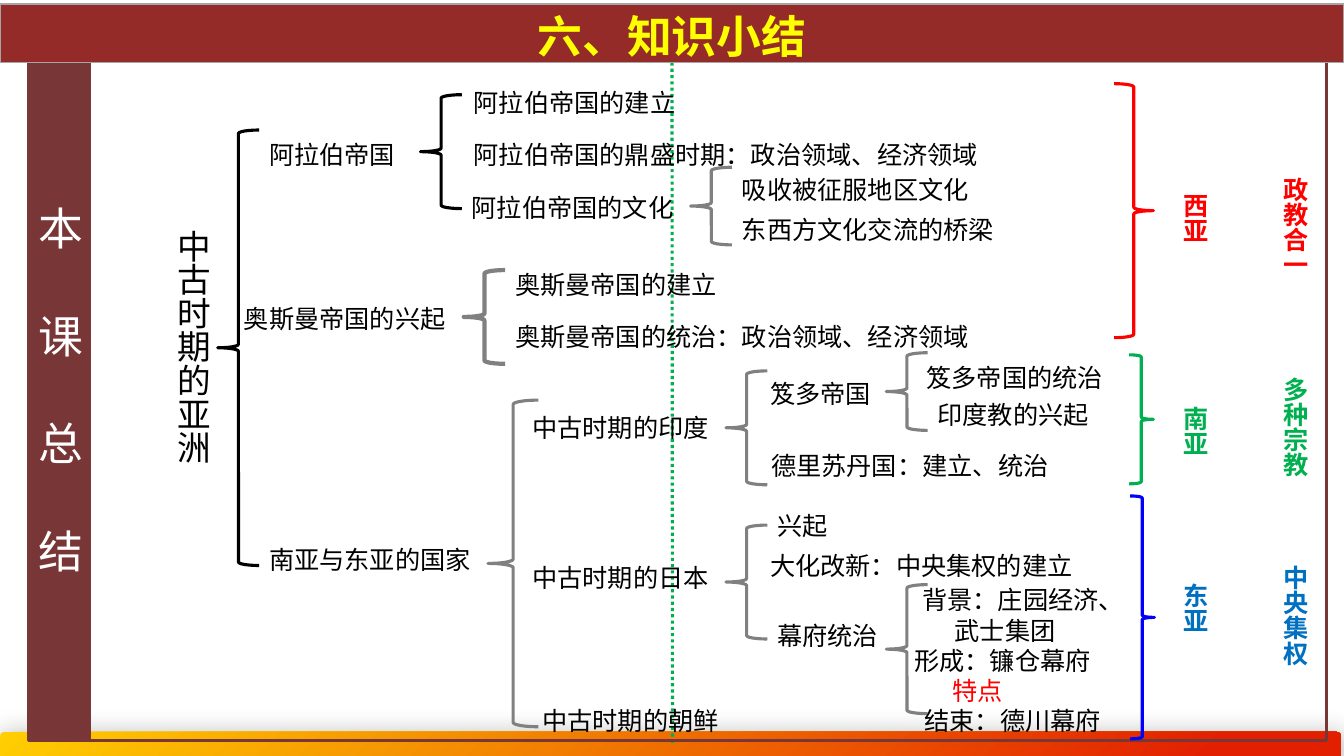
from dataclasses import dataclass
from lxml.etree import SubElement
from pptx import Presentation
from pptx.dml.color import RGBColor as RGB
from pptx.enum.dml import MSO_LINE
from pptx.enum.shapes import MSO_CONNECTOR, MSO_SHAPE as SHAPE
from pptx.enum.text import MSO_ANCHOR, MSO_AUTO_SIZE, PP_ALIGN
from pptx.oxml.ns import qn
from pptx.util import Pt


@dataclass(frozen=True)
class Theme:
    font: str = "Noto Sans CJK SC"
    body: int = 18
    root: int = 24
    heading: int = 32
    black: str = "000000"
    white: str = "FFFFFF"
    gray: str = "808080"
    red: str = "FF0000"
    green: str = "00B050"
    blue: str = "0000FF"
    sky: str = "0070C0"
    yellow: str = "FFFF00"
    banner: str = "942B28"
    banner_line: str = "A5A5A5"
    maroon: str = "783637"
    maroon_line: str = "793738"
    gold: str = "FFCF01"
    flame: str = "E22000"


T = Theme()
PX = 9144  # 100 px to the inch


def add_run(p, text, size, color, bold=False):
    """Add a run and fix the paragraph's line pitch to 1.2 times its size."""
    p.line_spacing = Pt(size * 1.2)
    r = p.add_run()
    r.text = text
    r.font.name, r.font.size, r.font.bold = T.font, Pt(size), bold
    r.font.color.rgb = RGB.from_string(color)
    SubElement(r.font._element, qn("a:ea"), typeface=T.font)


def add_outline(kind, box, color, width):
    """Add an unfilled shape without shadow."""
    sp = s.shapes.add_shape(kind, *(v * PX for v in box))
    sp.shadow.inherit = False
    sp.fill.background()
    sp.line.color.rgb = RGB.from_string(color)
    sp.line.width = Pt(width)
    return sp


prs = Presentation()
prs.slide_width, prs.slide_height = 1333 * PX, 750 * PX
s = prs.slides.add_slide(prs.slide_layouts[5])

# Title banner
title = s.shapes.title
title.left, title.top, title.width, title.height = 0, 4 * PX, 1333 * PX, 58 * PX
title.fill.solid()
title.fill.fore_color.rgb = RGB.from_string(T.banner)
title.line.color.rgb = RGB.from_string(T.banner_line)
title.line.width = Pt(1)
tf = title.text_frame
tf.auto_size = MSO_AUTO_SIZE.NONE
tf.vertical_anchor = MSO_ANCHOR.MIDDLE
tf.margin_top, tf.margin_bottom = 4 * PX, 0
p = tf.paragraphs[0]
p.alignment = PP_ALIGN.CENTER
add_run(p, "六、知识小结", T.heading, T.yellow, True)

# Footer band with a soft shadow
footer = add_outline(SHAPE.ROUNDED_RECTANGLE, (0, 726, 1330, 29), T.gold, 1)
footer.line.fill.background()
footer.fill.gradient()
footer.fill.gradient_angle = 315
for stop, position, color in zip(footer.fill.gradient_stops, (0, 0.9), (T.gold, T.flame)):
    stop.position = position
    stop.color.rgb = RGB.from_string(color)
effects = footer._element.spPr.find(qn("a:effectLst"))
shadow = SubElement(effects, qn("a:outerShdw"), blurRad=str(Pt(17.8)), dist=str(Pt(3)),
                    dir=str(87 * 60000), rotWithShape="0")
shade = SubElement(shadow, qn("a:srgbClr"), val=T.black)
SubElement(shade, qn("a:alpha"), val="33000")

# Dotted centre line
axis = s.shapes.add_connector(MSO_CONNECTOR.STRAIGHT, 667 * PX, 62 * PX, 667 * PX, 737 * PX)
axis.begin_connect(title, 2)
axis.line.color.rgb = RGB.from_string(T.green)
axis.line.width = Pt(2.25)
axis.line.dash_style = MSO_LINE.ROUND_DOT
SubElement(axis._element.spPr, qn("a:effectLst"))

# Frame and sidebar
add_outline(SHAPE.RECTANGLE, (28, 29, 1288, 706), T.maroon, 2)
sidebar = add_outline(SHAPE.RECTANGLE, (30, 31, 60, 702), T.maroon_line, 1)
sidebar.fill.solid()
sidebar.fill.fore_color.rgb = RGB.from_string(T.maroon)
tf = sidebar.text_frame
tf.word_wrap = True
tf.vertical_anchor = MSO_ANCHOR.MIDDLE
tf.margin_left = tf.margin_right = tf.margin_bottom = 0
tf.margin_top = 8 * PX
for i, char in enumerate("本课总结"):
    p = tf.paragraphs[0] if i == 0 else tf.add_paragraph()
    p.alignment = PP_ALIGN.CENTER
    if i:
        p.space_before = Pt(T.heading * 1.2)
    add_run(p, char, T.heading, T.white)

# Braces: left, top, width, height, colour, line width
left_braces = [
    (216, 129, 41, 432, T.black, 2.25),
    (484, 397, 50, 324, T.gray, 2.25),
    (417, 94, 41, 113, T.black, 2.25),
    (460, 268, 41, 93, T.gray, 3),
    (685, 166, 41, 77, T.gray, 2.25),
    (720, 368, 41, 113, T.gray, 2.25),
    (720, 521, 41, 113, T.gray, 2.25),
    (879, 350, 41, 77, T.gray, 2.25),
    (879, 580, 41, 128, T.gray, 2.25),
]
right_braces = [
    (1105, 83, 39, 252, T.red, 2.25),
    (1120, 352, 24, 128, T.green, 2.25),
    (1121, 492, 24, 241, T.blue, 2.25),
]
for kind, braces in ((SHAPE.LEFT_BRACE, left_braces), (SHAPE.RIGHT_BRACE, right_braces)):
    for *box, color, width in braces:
        add_outline(kind, box, color, width)

# Topics: left, top, width, then lines of (text, indent, colour)
topics = [(x, y, w, [(text, 0, T.black)]) for x, y, w, text in [
    (257, 131, 201, "阿拉伯帝国"),
    (232, 294, 229, "奥斯曼帝国的兴起"),
    (257, 533, 226, "南亚与东亚的国家"),
    (460, 80, 252, "阿拉伯帝国的建立"),
    (460, 131, 599, "阿拉伯帝国的鼎盛时期：政治领域、经济领域"),
    (458, 184, 240, "阿拉伯帝国的文化"),
    (726, 166, 271, "吸收被征服地区文化"),
    (726, 206, 310, "东西方文化交流的桥梁"),
    (501, 260, 229, "奥斯曼帝国的建立"),
    (501, 312, 515, "奥斯曼帝国的统治：政治领域、经济领域"),
    (518, 402, 229, "中古时期的印度"),
    (518, 551, 229, "中古时期的日本"),
    (528, 693, 202, "中古时期的朝鲜"),
    (754, 368, 135, "笈多帝国"),
    (755, 440, 322, "德里苏丹国：建立、统治"),
    (909, 352, 198, "笈多帝国的统治"),
    (920, 389, 186, "印度教的兴起"),
    (761, 499, 135, "兴起"),
    (754, 539, 330, "大化改新：中央集权的建立"),
    (761, 608, 135, "幕府统治"),
    (907, 693, 212, "结束：德川幕府"),
]]
topics += [
    (905, 573, 230, [("背景：庄园经济、", 0, T.black), ("武士集团", 32, T.black)]),
    (897, 633, 235, [("形成：镰仓幕府", 0, T.black), ("特点", 38, T.red)]),
]
for x, y, w, lines in topics:
    tf = s.shapes.add_textbox(x * PX, y * PX, w * PX, (10 + 30 * len(lines)) * PX).text_frame
    tf.word_wrap = True
    tf.margin_top = 7 * PX
    for i, (text, indent, color) in enumerate(lines):
        p = tf.paragraphs[0] if i == 0 else tf.add_paragraph()
        if indent:
            p._p.get_or_add_pPr().set("marL", str(indent * PX))
        add_run(p, text, T.body, color)

# Vertical labels: left, top, width, height, text, size, colour, bold
labels = [
    (156, 218, 60, 273, "中古时期的亚洲", T.root, T.black, False),
    (1155, 182, 50, 99, "西亚", T.body, T.red, True),
    (1255, 166, 50, 154, "政教合一", T.body, T.red, True),
    (1155, 393, 50, 99, "南亚", T.body, T.green, True),
    (1255, 364, 50, 148, "多种宗教", T.body, T.green, True),
    (1155, 569, 50, 99, "东亚", T.body, T.sky, True),
    (1255, 551, 50, 154, "中央集权", T.body, T.sky, True),
]
for *box, text, size, color, bold in labels:
    tf = s.shapes.add_textbox(*(v * PX for v in box)).text_frame
    tf.word_wrap = True
    tf._txBody.find(qn("a:bodyPr")).set("vert", "eaVert")
    add_run(tf.paragraphs[0], text, size, color, bold)

# The banner covers the top of the frame
title._element.getparent().append(title._element)

prs.save("out.pptx")
